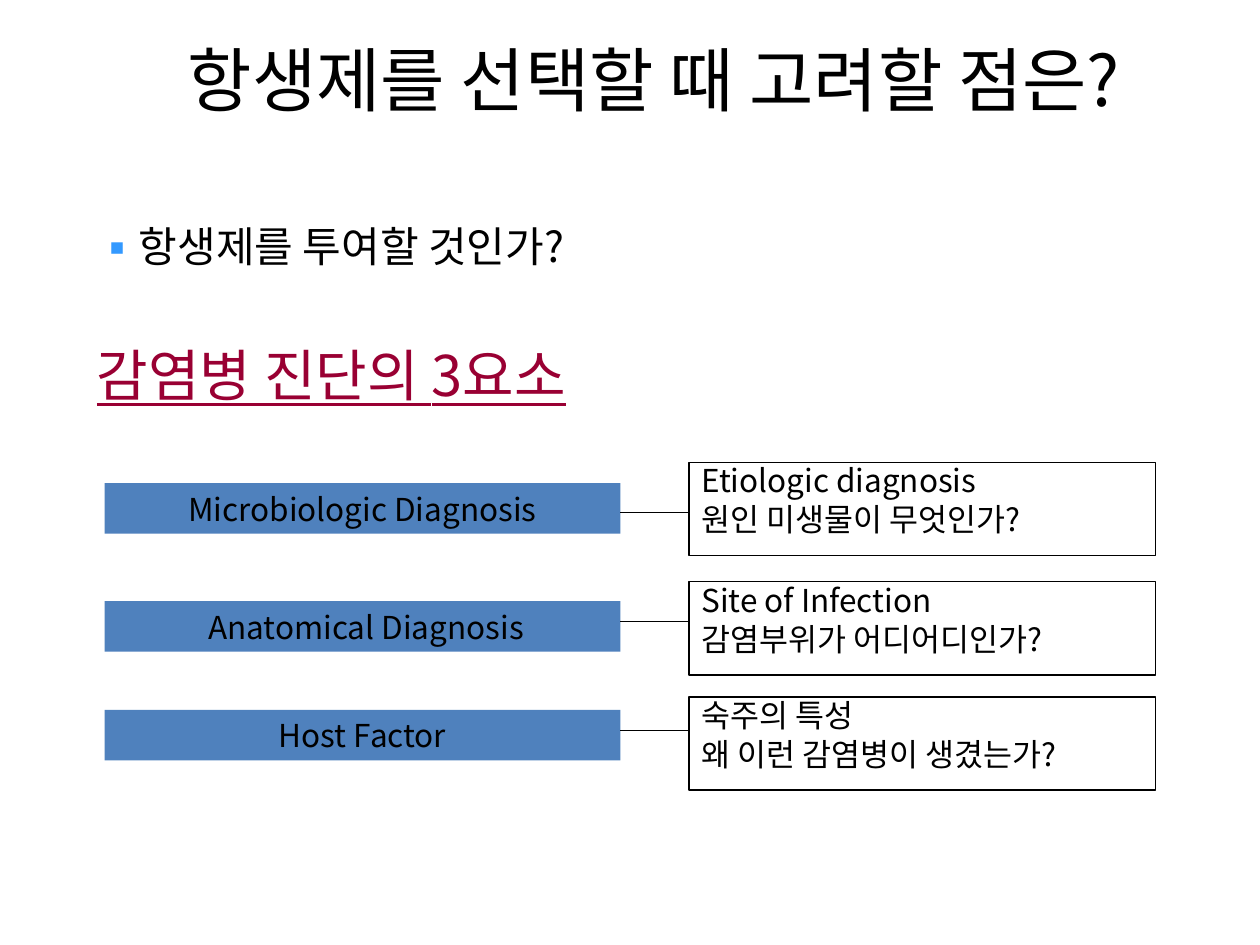
"""Build the slide on choosing antibiotics and the three elements of diagnosing infection."""
from lxml.etree import SubElement
from pptx import Presentation
from pptx.dml.color import RGBColor
from pptx.enum.shapes import MSO_CONNECTOR, MSO_SHAPE
from pptx.enum.text import MSO_ANCHOR as Anchor, PP_ALIGN as Align
from pptx.oxml.ns import qn
from pptx.util import Cm, Pt

FONT = "Noto Sans CJK KR"
COLORS = {"text": "000000", "heading": "990033", "bullet": "3399FF", "bar": "4F81BD"}


def color(name):
    return RGBColor.from_string(COLORS[name])


def write(paragraph, text, size, color_name="text", align=Align.LEFT):
    paragraph.alignment = align
    run = paragraph.add_run()
    run.text = text
    run.font.name = FONT
    run.font.size = Pt(size)
    run.font.color.rgb = color(color_name)
    SubElement(run.font._element, qn("a:ea"), typeface=FONT)
    return run


presentation = Presentation()
presentation.slide_width, presentation.slide_height = Cm(25.4), Cm(19.05)
slide = presentation.slides.add_slide(presentation.slide_layouts[3])
title, question, heading = slide.placeholders

title.left, title.top, title.width, title.height = Cm(1.27), Cm(0), Cm(23.83), Cm(3.18)
title.text_frame.vertical_anchor = Anchor.MIDDLE
write(title.text_frame.paragraphs[0], "항생제를 선택할 때 고려할 점은?", 40, align=Align.CENTER)

for body, top in ((question, 4.32), (heading, 6.73)):
    body.left, body.top, body.width, body.height = Cm(1.7), Cm(top), Cm(22.4), Cm(11.99)
    paragraph = body.text_frame.paragraphs[0]
    paragraph.space_before = Pt(0)
    properties = paragraph._p.get_or_add_pPr()
    properties.set("marL", str(Cm(0.76)))
    properties.set("indent", str(Cm(-0.76)))
    if body is question:
        bullet_color = SubElement(properties, qn("a:buClr"))
        SubElement(bullet_color, qn("a:srgbClr"), val=COLORS["bullet"])
        SubElement(properties, qn("a:buFont"), typeface=FONT)
        SubElement(properties, qn("a:buChar"), char="▪")
        write(paragraph, "항생제를 투여할 것인가?", 24)
    else:
        SubElement(properties, qn("a:buNone"))
        write(paragraph, "감염병 진단의 3요소", 32, "heading").font.underline = True

rows = (
    ("Microbiologic Diagnosis", ("Etiologic diagnosis", "원인 미생물이 무엇인가?"), 9.74, 9.32, 10.33),
    (" Anatomical Diagnosis", ("Site of Infection", "감염부위가 어디어디인가?"), 12.12, 11.73, 12.53),
    ("Host Factor", ("숙주의 특성", "왜 이런 감염병이 생겼는가?"), 14.31, 14.05, 14.73),
)
for label, details, bar_top, box_top, line_y in rows:
    bar = slide.shapes.add_shape(MSO_SHAPE.RECTANGLE, Cm(2.11), Cm(bar_top), Cm(10.4), Cm(1.02))
    bar.shadow.inherit = False
    bar.fill.solid()
    bar.fill.fore_color.rgb = color("bar")
    bar.line.fill.background()
    write(bar.text_frame.paragraphs[0], label, 18, align=Align.CENTER)

    box = slide.shapes.add_shape(MSO_SHAPE.RECTANGLE, Cm(13.89), Cm(box_top), Cm(9.4), Cm(1.88))
    box.shadow.inherit = False
    box.fill.background()
    box.line.color.rgb = color("text")
    box.line.width = Pt(0.75)
    frame = box.text_frame
    frame.vertical_anchor = Anchor.TOP
    for index, detail in enumerate(details):
        paragraph = frame.add_paragraph() if index else frame.paragraphs[0]
        paragraph.line_spacing = 0.8
        paragraph.space_before = Pt(5 * index)
        write(paragraph, detail, 18)

    link = slide.shapes.add_connector(
        MSO_CONNECTOR.STRAIGHT, Cm(12.5), Cm(line_y), Cm(13.89), Cm(line_y))
    link.line.color.rgb = color("text")
    link.line.width = Pt(0.75)
    SubElement(link._element.spPr, qn("a:effectLst"))

presentation.save("out.pptx")
